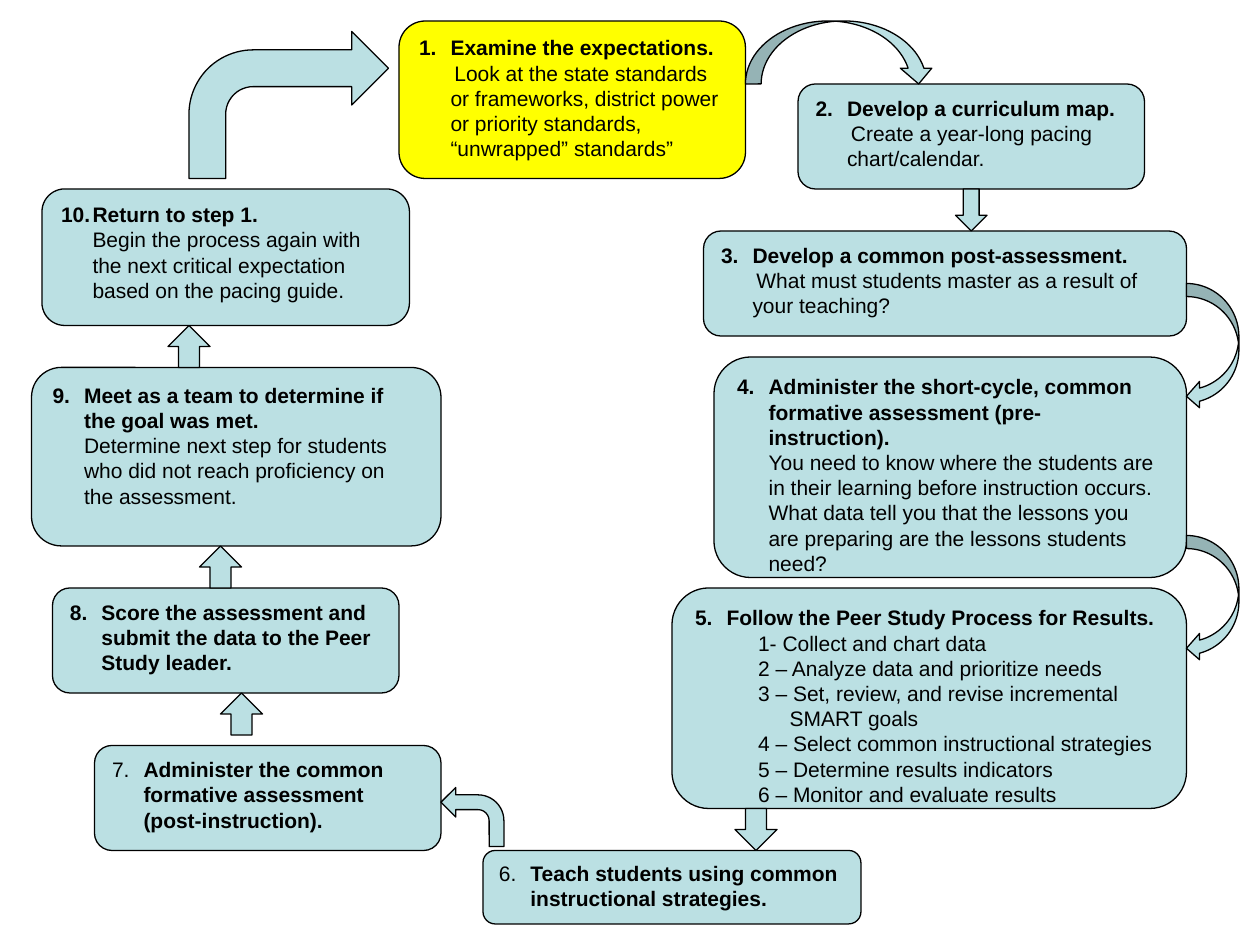
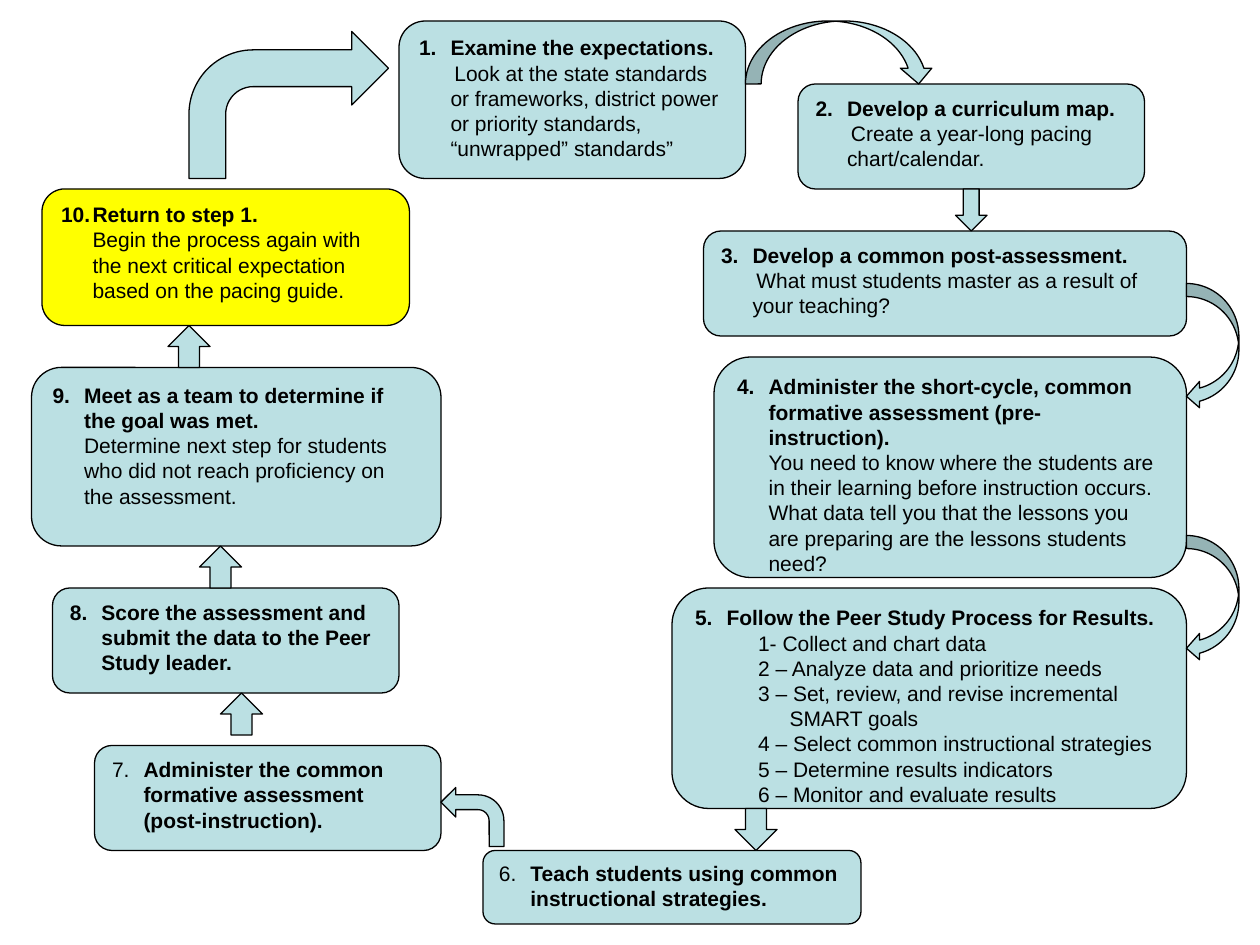
from lxml.etree import SubElement
from pptx import Presentation
from pptx.dml.color import RGBColor
from pptx.enum.shapes import MSO_SHAPE
from pptx.enum.text import MSO_ANCHOR, PP_ALIGN
from pptx.oxml.ns import qn
from pptx.util import Pt

PX = 9525  # EMU per px, 96 px to the inch
HANG = 24
RIGHT_MARGIN = 12
COLORS = {"step": "BBE0E3", "current": "FFFF00", "ink": "000000"}
FONT = "Arial"

# Each step: box (left, top, width, height), heading, body, first-line indent of the body
STEPS = {
    1: ((304, 16, 264, 120), "Examine the expectations.",
        "Look at the state standards or frameworks, district power or priority "
        "standards, “unwrapped” standards”", 3),
    2: ((608, 64, 264, 80), "Develop a curriculum map.",
        "Create a year-long pacing chart/calendar.", 3),
    3: ((536, 176, 368, 80), "Develop a common post-assessment.",
        "What must students master as a result of your teaching?", 3),
    4: ((544, 272, 360, 168),
        "Administer the short-cycle, common formative assessment (pre-instruction).",
        "You need to know where the students are in their learning before instruction "
        "occurs. What data tell you that the lessons you are preparing are the lessons "
        "students need?", 0),
    5: ((512, 448, 392, 168), "Follow the Peer Study Process for Results.", None, 0),
    6: ((368, 648, 288, 56),
        "Teach students using common instructional strategies.", None, 0),
    7: ((72, 568, 264, 80),
        "Administer the common formative assessment (post-instruction).", None, 0),
    8: ((40, 448, 264, 80),
        "Score the assessment and submit the data to the Peer Study leader.", None, 0),
    9: ((24, 280, 312, 136), "Meet as a team to determine if the goal was met.",
        "Determine next step for students who did not reach proficiency on the "
        "assessment.", 0),
    10: ((32, 144, 280, 104), "Return to step 1.",
         "Begin the process again with the next critical expectation based on the "
         "pacing guide.", 0),
}
PEER_STUDY_STEPS = [
    "1- Collect and chart data",
    "2 – Analyze data and prioritize needs",
    "3 – Set, review, and revise incremental SMART goals",
    "4 – Select common instructional strategies",
    "5 – Determine results indicators",
    "6 – Monitor and evaluate results",
]
TYPED_NUMBERS = {6: False, 7: False, 8: True}  # step: is its number bold

ARROWS = [
    (MSO_SHAPE.CURVED_DOWN_ARROW, (568, 16, 144, 48)),
    (MSO_SHAPE.DOWN_ARROW, (728, 144, 24, 32)),
    (MSO_SHAPE.CURVED_LEFT_ARROW, (904, 408, 40, 96)),
    (MSO_SHAPE.CURVED_LEFT_ARROW, (904, 216, 40, 96)),
    (MSO_SHAPE.DOWN_ARROW, (560, 616, 32, 32)),
    (MSO_SHAPE.BENT_ARROW, (336, 600, 48, 45)),
    (MSO_SHAPE.UP_ARROW, (168, 528, 32, 32)),
    (MSO_SHAPE.UP_ARROW, (152, 416, 32, 32)),
    (MSO_SHAPE.UP_ARROW, (128, 248, 32, 32)),
    (MSO_SHAPE.BENT_ARROW, (144, 24, 152, 112)),
]
TEACH_TO_ASSESS = 5  # the arrow that points left


def add_outlined(slide, preset, box, color):
    outlined = slide.shapes.add_shape(preset, *(length * PX for length in box))
    outlined.shadow.inherit = False
    outlined.fill.solid()
    outlined.fill.fore_color.rgb = RGBColor.from_string(COLORS[color])
    outlined.line.color.rgb = RGBColor.from_string(COLORS["ink"])
    outlined.line.width = Pt(0.75)
    return outlined


def format_paragraph(paragraph, left=HANG, first=-HANG, bold=None, number=None):
    """Set indents and font; a number makes it an automatic list item."""
    paragraph.alignment = PP_ALIGN.LEFT
    properties = paragraph._p.get_or_add_pPr()
    properties.set("marL", str(left * PX))
    properties.set("indent", str(first * PX))
    if number:
        SubElement(properties, qn("a:buFont"), typeface="+mj-lt")
        SubElement(properties, qn("a:buAutoNum"), type="arabicPeriod", startAt=str(number))
    else:
        SubElement(properties, qn("a:buNone"))
    for font in [paragraph.font] + [run.font for run in paragraph.runs]:
        font.name, font.size = FONT, Pt(12)
        font.color.rgb = RGBColor.from_string(COLORS["ink"])
        if bold is not None:
            font.bold = bold


def add_step(slide, number, color):
    box, heading, body, body_indent = STEPS[number]
    frame = add_outlined(slide, MSO_SHAPE.ROUNDED_RECTANGLE, box, color).text_frame
    frame.word_wrap = True
    frame.vertical_anchor = MSO_ANCHOR.TOP
    if number == 4:
        frame.margin_right = RIGHT_MARGIN * PX
    title = frame.paragraphs[0]
    if number in TYPED_NUMBERS:
        for text, bold in ((f"{number}.\t", TYPED_NUMBERS[number]), (heading, True)):
            run = title.add_run()
            run.text = text
            run.font.bold = bold
        format_paragraph(title)
    else:
        title.add_run().text = heading
        format_paragraph(title, bold=True, number=number)
    if body:
        explanation = frame.add_paragraph()
        explanation.add_run().text = body
        format_paragraph(explanation, first=body_indent, bold=False)
    if number == 5:
        for text in PEER_STUDY_STEPS:
            item = frame.add_paragraph()
            item.level = 1
            item.add_run().text = text
            format_paragraph(item, left=3 * HANG, bold=False)


def add_arrows(slide):
    for index, (preset, box) in enumerate(ARROWS):
        arrow = add_outlined(slide, preset, box, "step")
        if index == TEACH_TO_ASSESS:
            arrow._element.spPr.xfrm.set("flipH", "1")


def add_cycle_slide(deck, current):
    """Draw the ten-step cycle with the current step highlighted."""
    slide = deck.slides.add_slide(deck.slide_layouts[6])
    for number in STEPS:
        add_step(slide, number, "current" if number == current else "step")
    add_arrows(slide)


def main():
    deck = Presentation()
    deck.slide_width, deck.slide_height = 960 * PX, 720 * PX
    for current in (1, 10):
        add_cycle_slide(deck, current)
    deck.save("out.pptx")


if __name__ == "__main__":
    main()
